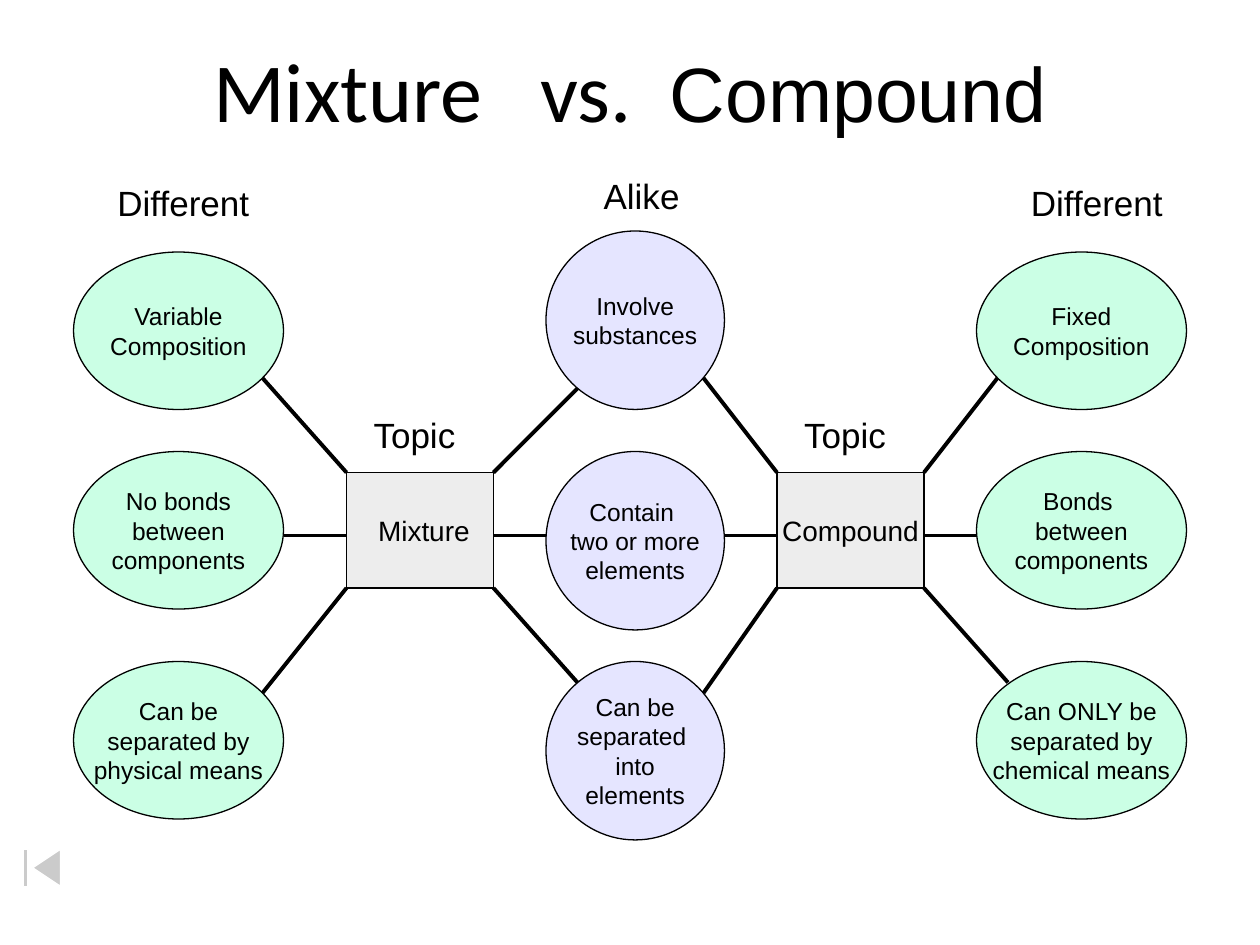
from dataclasses import dataclass
from pptx import Presentation
from pptx.dml.color import RGBColor
from pptx.enum.shapes import MSO_CONNECTOR, MSO_SHAPE
from pptx.enum.text import MSO_ANCHOR, MSO_AUTO_SIZE, PP_ALIGN
from pptx.oxml.ns import qn
from pptx.util import Inches, Pt
from lxml import etree

OVAL, RECT = MSO_SHAPE.OVAL, MSO_SHAPE.RECTANGLE
BACK = MSO_SHAPE.ACTION_BUTTON_BEGINNING
LINE = MSO_CONNECTOR.STRAIGHT
MID, TOP = MSO_ANCHOR.MIDDLE, MSO_ANCHOR.TOP
MIDDLE, LEFT = PP_ALIGN.CENTER, PP_ALIGN.LEFT
FIT = MSO_AUTO_SIZE.SHAPE_TO_FIT_TEXT

BLACK = RGBColor(0x00, 0x00, 0x00)
WHITE = RGBColor(0xFF, 0xFF, 0xFF)
GREEN = RGBColor(0x99, 0xFF, 0xCC)
LILAC = RGBColor(0xCC, 0xCC, 0xFF)
GRAY = RGBColor(0xDD, 0xDD, 0xDD)

# The grid has 120 columns and 90 rows, twelve to the inch
UNIT = Inches(1) / 12


@dataclass
class Node:
    kind: int
    col: float
    row: float
    wide: float
    high: float
    fill: RGBColor
    text: str = ""
    size: int = 14
    edge: RGBColor = BLACK


@dataclass
class Label:
    col: float
    row: float
    wide: float
    text: str


def grid(*cells: float) -> list[int]:
    return [round(cell * UNIT) for cell in cells]


def style(run, size: float, name: str = "Arial") -> None:
    for key, val in {"size": Pt(size), "name": name}.items():
        setattr(run.font, key, val)
    run.font.color.rgb = BLACK


def write(frame, text: str, size: float, align: int, form: dict) -> None:
    for key, val in form.items():
        setattr(frame, key, val)
    for num, part in enumerate(text.split("\n")):
        para = frame.add_paragraph() if num else frame.paragraphs[0]
        para.alignment = align
        run = para.add_run()
        run.text = part
        style(run, size)


def draw_node(slide, node: Node) -> None:
    shape = slide.shapes.add_shape(
        node.kind, *grid(node.col, node.row, node.wide, node.high))
    shape.shadow.inherit = False
    shape.fill.solid()
    shape.fill.fore_color.rgb = node.fill
    tint = shape.fill._xPr.find(qn("a:solidFill"))[0]
    etree.SubElement(tint, qn("a:alpha"), val="50000")
    shape.line.color.rgb = node.edge
    shape.line.width = Pt(0.75)
    if node.text:
        write(shape.text_frame, node.text, node.size, MIDDLE,
              {"word_wrap": False, "vertical_anchor": MID})


def draw_label(slide, label: Label) -> None:
    box = slide.shapes.add_textbox(
        *grid(label.col, label.row, label.wide, 5.2))
    write(box.text_frame, label.text, 20, LEFT,
          {"word_wrap": False, "vertical_anchor": TOP, "auto_size": FIT})


def draw_link(slide, start: tuple, end: tuple) -> None:
    link = slide.shapes.add_connector(LINE, *grid(*start, *end))
    link.line.color.rgb = BLACK
    link.line.width = Pt(2.25)
    etree.SubElement(link._element.spPr, qn("a:effectLst"))


def draw_title(slide) -> None:
    box = slide.shapes.add_textbox(*grid(9, 1, 102, 15))
    frame = box.text_frame
    frame.word_wrap = True
    frame.vertical_anchor = MID
    para = frame.paragraphs[0]
    para.alignment = MIDDLE
    # Wide gaps are single spaces with added tracking, in points
    for text, size, name, gap in (
            ("Mixture", 48, "Calibri", 0), (" ", 48, "Calibri", 21.7),
            ("vs.", 48, "Calibri", 0), (" ", 48, "Calibri", 10.85),
            ("Compound", 44, "Arial", 0)):
        run = para.add_run()
        run.text = text
        style(run, size, name)
        if gap:
            run.font._element.set("spc", str(round(gap * 100)))


# Ovals: column, width, height, colour, then rows and texts
GROUPS = (
    (7, 20, 15, GREEN, (24, 43, 63), (
        "Variable\nComposition",
        "No bonds\nbetween\ncomponents",
        "Can be\nseparated by\nphysical means")),
    (52, 17, 17, LILAC, (22, 43, 63), (
        "Involve\nsubstances",
        "Contain \ntwo or more\nelements",
        "Can be\nseparated \ninto\nelements")),
    (93, 20, 15, GREEN, (24, 43, 63), (
        "Fixed\nComposition",
        "Bonds \nbetween\ncomponents",
        "Can ONLY be\nseparated by\nchemical means")),
)
TOPICS = (
    Node(RECT, 33, 45, 14, 11, GRAY, " Mixture", 16),
    Node(RECT, 74, 45, 14, 11, GRAY, "Compound", 16),
)
LABELS = (
    Label(10, 16.7, 15, "Different"),
    Label(56.3, 16, 9.7, "Alike"),
    Label(97, 16.7, 15, "Different"),
    Label(34.4, 38.8, 10.6, "Topic"),
    Label(75.4, 38.8, 10.6, "Topic"),
)
# Each topic side fans out to the upper, middle and lower oval
ROWS = (45, 51, 56)
FANS = {
    33: ((25, 36), (27, 51), (25, 66)),
    47: ((55, 37), (52, 51), (55, 65)),
    74: ((67, 36), (69, 51), (67, 66)),
    88: ((95, 36), (93, 51), (96, 65)),
}


def main() -> None:
    deck = Presentation()
    deck.slide_width, deck.slide_height = grid(120, 90)
    slide = deck.slides.add_slide(deck.slide_layouts[6])
    draw_title(slide)

    # Topics and their traits
    for topic in TOPICS:
        draw_node(slide, topic)
    for col, wide, high, fill, rows, texts in GROUPS:
        for row, text in zip(rows, texts):
            draw_node(slide, Node(OVAL, col, row, wide, high, fill, text))
    for label in LABELS:
        draw_label(slide, label)

    # Links from topic sides to ovals
    for col, ends in FANS.items():
        for row, end in zip(ROWS, ends):
            draw_link(slide, (col, row), end)

    # Back button
    draw_node(slide, Node(BACK, 0, 80.3, 8, 4.7, WHITE, edge=WHITE))
    deck.save("out.pptx")


if __name__ == "__main__":
    main()
